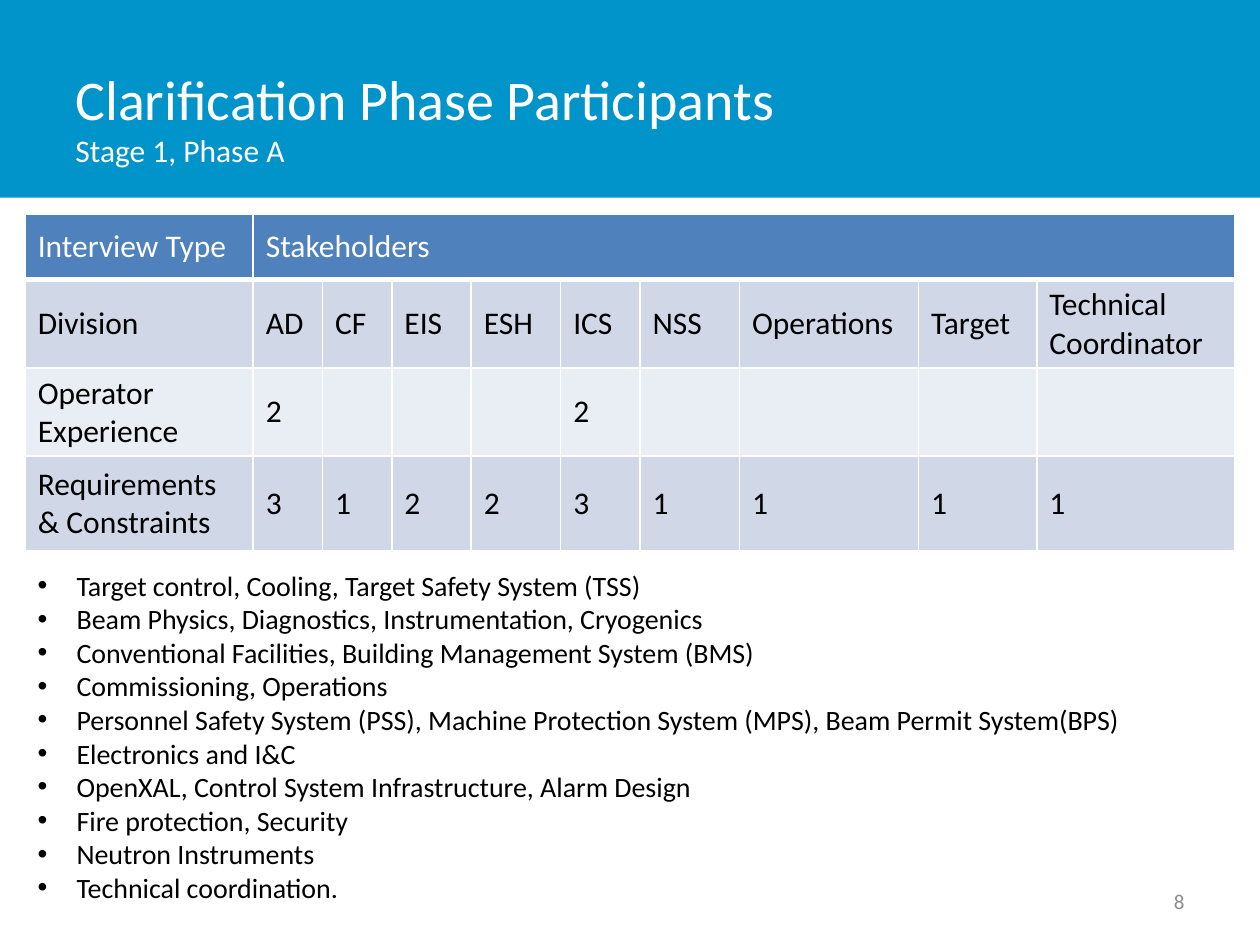
from dataclasses import dataclass

from lxml import etree
from pptx import Presentation
from pptx.dml.color import RGBColor
from pptx.enum.shapes import MSO_SHAPE
from pptx.enum.text import MSO_ANCHOR, MSO_AUTO_SIZE, PP_ALIGN
from pptx.oxml.ns import qn
from pptx.util import Inches, Pt

RECT = MSO_SHAPE.RECTANGLE
MIDDLE, TOP = MSO_ANCHOR.MIDDLE, MSO_ANCHOR.TOP
LEFT, RIGHT = PP_ALIGN.LEFT, PP_ALIGN.RIGHT
FIT = MSO_AUTO_SIZE.SHAPE_TO_FIT_TEXT


@dataclass(frozen=True)
class Theme:
    """Colours, type sizes and font of the slide."""
    font: str = "Calibri"
    banner: str = "0094CA"
    head: str = "4F81BD"
    bands: tuple = ("D0D8E8", "E9EDF4")
    white: str = "FFFFFF"
    black: str = "000000"
    grey: str = "8C8C8C"
    title: int = 32
    body: int = 18
    item: int = 16
    small: int = 12


THEME = Theme()
WIDE, HIGH = 10, 7.5
EDGE = 0.2
COLS = [1.81, 0.55, 0.55, 0.63, 0.71, 0.63, 0.79, 1.42, 0.94, 1.57]
ROWS = [0.52, 0.63, 0.63, 0.75]
CELLS = [
    ["Interview Type", "Stakeholders"] + [""] * 8,
    ["Division", "AD", "CF", "EIS", "ESH", "ICS", "NSS", "Operations",
     "Target", "Technical Coordinator"],
    ["Operator Experience", "2", "", "", "", "2", "", "", "", ""],
    ["Requirements & Constraints", "3", "1", "2", "2", "3", "1", "1", "1", "1"],
]
ITEMS = [
    "Target control, Cooling, Target Safety System (TSS)",
    "Beam Physics, Diagnostics, Instrumentation, Cryogenics",
    "Conventional Facilities, Building Management System (BMS)",
    "Commissioning, Operations",
    "Personnel Safety System (PSS), Machine Protection System (MPS), "
    "Beam Permit System(BPS)",
    "Electronics and I&C",
    "OpenXAL, Control System Infrastructure, Alarm Design",
    "Fire protection, Security",
    "Neutron Instruments",
    "Technical coordination.",
]


def add_run(para, text, size, color):
    """Add one styled run to a paragraph."""
    run = para.add_run()
    run.text = text
    run.font.name = THEME.font
    run.font.size = Pt(size)
    run.font.color.rgb = RGBColor.from_string(color)


def add_box(slide, area, anchor=MIDDLE, wrap=True):
    """Add an empty text box and return its frame."""
    frame = slide.shapes.add_textbox(*map(Inches, area)).text_frame
    frame.word_wrap = wrap
    frame.vertical_anchor = anchor
    return frame


def add_banner(slide):
    """Draw the band at the top with the title on it."""
    band = slide.shapes.add_shape(RECT, 0, 0, Inches(WIDE), Inches(1.57))
    band.shadow.inherit = False
    band.fill.solid()
    band.fill.fore_color.rgb = RGBColor.from_string(THEME.banner)
    band.line.fill.background()
    para = add_box(slide, (0.5, 0.3, 7.81, 1.25)).paragraphs[0]
    add_run(para, "Clarification Phase Participants", THEME.title, THEME.white)
    para.add_line_break()
    add_run(para, "Stage 1, Phase A", THEME.body, THEME.white)


def set_edges(cell, base):
    """Rule the four sides of a cell in white."""
    props = cell._tc.get_or_add_tcPr()
    for spot, (side, width) in enumerate(zip("LRTB", (1, 1, 1, base))):
        line = etree.Element(qn(f"a:ln{side}"), w=str(Pt(width)))
        fill = etree.SubElement(line, qn("a:solidFill"))
        etree.SubElement(fill, qn("a:srgbClr"), val=THEME.white)
        props.insert(spot, line)


def fill_cell(cell, text, row):
    """Fill one cell with its text, band colour and edges."""
    fill = THEME.bands[(row - 1) % 2] if row else THEME.head
    cell.fill.solid()
    cell.fill.fore_color.rgb = RGBColor.from_string(fill)
    cell.vertical_anchor = MIDDLE
    set_edges(cell, 1 if row else 3)
    if text:
        color = THEME.black if row else THEME.white
        add_run(cell.text_frame.paragraphs[0], text, THEME.body, color)


def add_grid(slide):
    """Add the table of interviews by division."""
    area = map(Inches, (EDGE, 1.7, sum(COLS), sum(ROWS)))
    table = slide.shapes.add_table(len(ROWS), len(COLS), *area).table
    for col, width in zip(table.columns, COLS):
        col.width = Inches(width)
    for row, height in zip(table.rows, ROWS):
        row.height = Inches(height)
    for r, line in enumerate(CELLS):
        for c, text in enumerate(line):
            fill_cell(table.cell(r, c), text, r)
    table.cell(0, 1).merge(table.cell(0, len(COLS) - 1))


def add_list(slide):
    """Add the bulleted list of topics."""
    frame = add_box(slide, (EDGE, 4.46, 8.94, 2.79), TOP, False)
    frame.auto_size = FIT
    for spot, text in enumerate(ITEMS):
        para = frame.add_paragraph() if spot else frame.paragraphs[0]
        para.alignment = LEFT
        props = para._p.get_or_add_pPr()
        props.set("marL", str(Inches(0.31)))
        props.set("indent", str(-Inches(0.31)))
        etree.SubElement(props, qn("a:buFont"), typeface="Arial")
        etree.SubElement(props, qn("a:buChar"), char="•")
        add_run(para, text, THEME.item, THEME.black)


def add_number(slide):
    """Add the page number at the lower right."""
    para = add_box(slide, (7.17, 6.95, 2.33, 0.4)).paragraphs[0]
    para.alignment = RIGHT
    add_run(para, "8", THEME.small, THEME.grey)


def main():
    """Build and save the slide."""
    deck = Presentation()
    deck.slide_width, deck.slide_height = Inches(WIDE), Inches(HIGH)
    slide = deck.slides.add_slide(deck.slide_layouts[6])
    add_banner(slide)
    add_number(slide)
    add_grid(slide)
    add_list(slide)
    deck.save("out.pptx")


if __name__ == "__main__":
    main()
